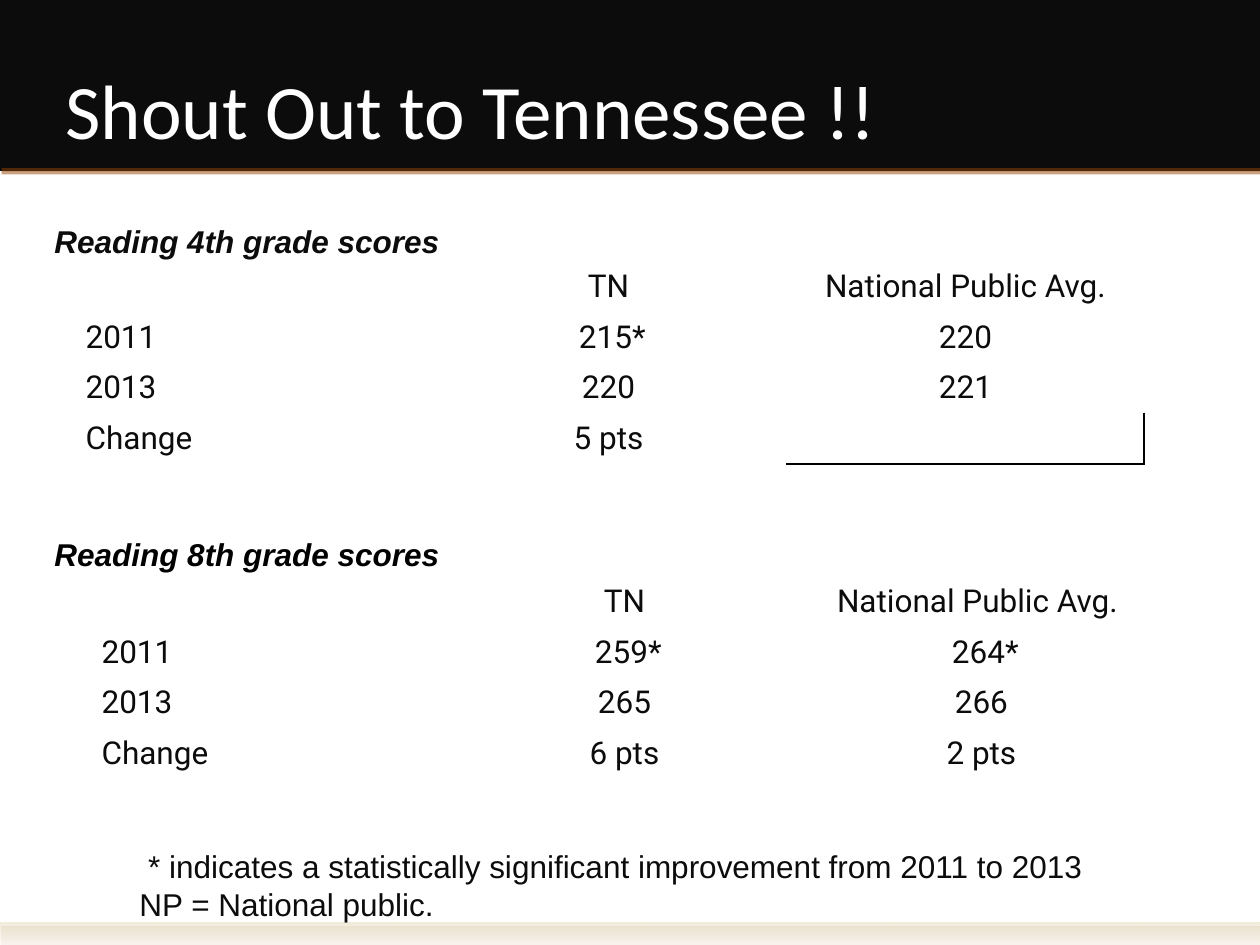
from lxml.etree import SubElement
from pptx import Presentation
from pptx.dml.color import RGBColor
from pptx.enum.shapes import MSO_SHAPE as Preset
from pptx.enum.text import MSO_ANCHOR as Anchor, PP_ALIGN as Align
from pptx.oxml.ns import qn
from pptx.util import Emu, Pt

EMU_PER_PX = 914400 / 126

WHITE = RGBColor(0xFF, 0xFF, 0xFF)
BLACK = RGBColor(0x00, 0x00, 0x00)
INK = RGBColor(0x0C, 0x0C, 0x0C)
BROWN = RGBColor(0x97, 0x47, 0x06)
SAND = RGBColor(0xF0, 0xE9, 0xD4)
CREAM = RGBColor(0xFD, 0xFC, 0xF9)


def px(length):
    return Emu(round(length * EMU_PER_PX))


class SlideBuilder:
    body_size = 18
    column_width = 357
    row_height = 50

    def __init__(self, slide):
        self.slide = slide

    def band(self, left, top, width, height, color=None, shadow=True):
        shape = self.slide.shapes.add_shape(
            Preset.RECTANGLE, px(left), px(top), px(width), px(height))
        shape.shadow.inherit = False
        shape.line.fill.background()
        if color is not None:
            shape.fill.solid()
            shape.fill.fore_color.rgb = color
        if shadow:
            self.add_shadow(shape)
        return shape

    def add_shadow(self, shape):
        effects = shape._element.spPr.find(qn("a:effectLst"))
        outer = SubElement(effects, qn("a:outerShdw"), blurRad="0",
                           dist=str(Pt(2.2)), dir=str(63 * 60000))
        color = SubElement(outer, qn("a:srgbClr"), val=str(BROWN))
        SubElement(color, qn("a:alpha"), val="50000")

    def gradient_band(self, left, top, width, height, stops):
        shape = self.band(left, top, width, height)
        shape.fill.gradient()
        shape.fill.gradient_angle = 270
        for stop, (position, color, _) in zip(shape.fill.gradient_stops, stops):
            stop.position = position
            stop.color.rgb = color
        gradient = shape._element.spPr.find(qn("a:gradFill"))
        for node, (_, _, opacity) in zip(gradient.iter(qn("a:srgbClr")), stops):
            SubElement(node, qn("a:alpha"), val=str(opacity * 1000))

    def format_text(self, text_frame, font_name, size, color, bold=False,
                    italic=False, align=Align.LEFT):
        for paragraph in text_frame.paragraphs:
            paragraph.alignment = align
            for run in paragraph.runs:
                font = run.font
                font.name, font.size = font_name, Pt(size)
                font.bold, font.italic = bold, italic
                font.color.rgb = color

    def text(self, left, top, width, height, content, font_name="Arial",
             size=body_size, color=INK, anchor=Anchor.MIDDLE, emphasis=False):
        box = self.slide.shapes.add_textbox(
            px(left), px(top), px(width), px(height))
        text_frame = box.text_frame
        text_frame.word_wrap = True
        text_frame.vertical_anchor = anchor
        text_frame.text = content
        self.format_text(text_frame, font_name, size, color, emphasis, emphasis)

    def table(self, left, top, rows):
        columns = len(rows[0])
        frame = self.slide.shapes.add_table(
            len(rows), columns, px(left), px(top),
            px(columns * self.column_width), px(len(rows) * self.row_height))
        table = frame.table
        table.first_row = table.horz_banding = False
        for column in table.columns:
            column.width = px(self.column_width)
        for row_index, values in enumerate(rows):
            for column_index, value in enumerate(values):
                cell = table.cell(row_index, column_index)
                cell.fill.background()
                cell.vertical_anchor = Anchor.MIDDLE
                cell.text = value
                align = Align.CENTER if column_index else Align.LEFT
                self.format_text(cell.text_frame, "Roboto", self.body_size,
                                 INK, align=align)
        return table

    def cell_borders(self, cell, sides):
        properties = cell._tc.get_or_add_tcPr()
        for index, side in enumerate(sides):
            line = properties.makeelement(qn(f"a:{side}"), {"w": str(Pt(1))})
            fill = SubElement(line, qn("a:solidFill"))
            SubElement(fill, qn("a:srgbClr"), val=str(BLACK))
            properties.insert(index, line)


def main():
    presentation = Presentation()
    presentation.slide_width, presentation.slide_height = px(1260), px(945)
    slide = presentation.slides.add_slide(presentation.slide_layouts[6])
    slide.background.fill.solid()
    slide.background.fill.fore_color.rgb = BLACK
    builder = SlideBuilder(slide)

    # Page, header and footer bands
    builder.band(0, -1, 1260, 946, WHITE, shadow=False)
    builder.band(0, 4, 1260, 167, INK)
    builder.gradient_band(0, 923, 1260, 22, [(0, SAND, 82), (1, CREAM, 90)])
    builder.band(0, 0, 1260, 168, INK)

    # Title
    builder.text(53, 56, 840, 184, "Shout Out to Tennessee !!", "Calibri", 44,
                 WHITE, Anchor.TOP)

    # 4th grade scores
    builder.text(42, 216, 414, 50, "Reading 4th grade scores", emphasis=True)
    fourth_grade = builder.table(73, 262, [
        ["", "TN", "National Public Avg."],
        ["2011", " 215*", "220"],
        ["2013", "220", "221"],
        ["Change", "5 pts", ""],
    ])
    builder.cell_borders(fourth_grade.cell(3, 2), ["lnR", "lnB"])

    # 8th grade scores
    builder.text(42, 529, 1086, 50, "Reading 8th grade scores", color=BLACK,
                 anchor=Anchor.TOP, emphasis=True)
    builder.table(89, 577, [
        ["", "TN", "National Public Avg. "],
        ["2011", " 259*", " 264*"],
        ["2013", "265", "266"],
        ["Change", "6 pts", "2 pts"],
    ])

    # Footnote
    builder.text(127, 840, 992, 90,
                 " * indicates a statistically significant improvement "
                 "from 2011 to 2013 NP = National public.")

    presentation.save("out.pptx")


if __name__ == "__main__":
    main()
